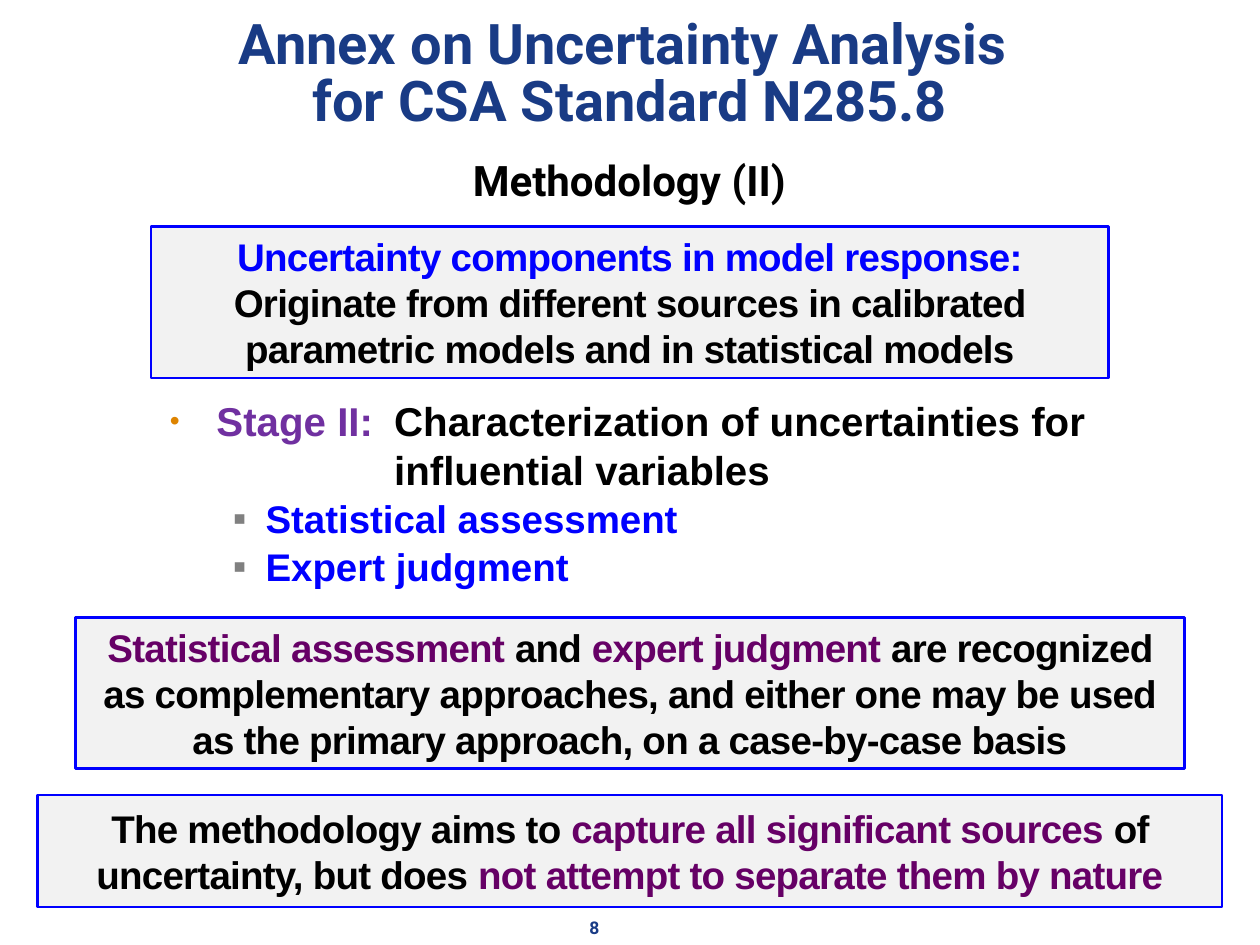
from dataclasses import dataclass
from typing import Optional

import lxml.etree
import pptx
import pptx.dml.color
import pptx.enum.shapes
import pptx.enum.text
import pptx.oxml.ns
import pptx.util

EMU_PER_PX = 9144
COLORS = {
    "navy": "193B85", "black": "000000", "white": "FFFFFF", "blue": "0000FF",
    "panel": "F2F2F2", "plum": "660066", "purple": "7030A0",
    "orange": "DE8400", "gray": "808080",
}
CENTER = pptx.enum.text.PP_ALIGN.CENTER
LEFT = pptx.enum.text.PP_ALIGN.LEFT
TOP = pptx.enum.text.MSO_ANCHOR.TOP
MIDDLE = pptx.enum.text.MSO_ANCHOR.MIDDLE


@dataclass(frozen=True)
class Box:
    left: int
    top: int
    width: int
    height: int


@dataclass(frozen=True)
class Style:
    font: str
    size: int
    tracking: int = 0


@dataclass(frozen=True)
class Piece:
    text: str
    color: str
    break_before: bool = False


@dataclass(frozen=True)
class Bullet:
    symbol: str
    color: str
    percent: int
    margin: int
    hanging: int
    level: int = 0
    space_before: int = 0
    tab: Optional[int] = None


@dataclass(frozen=True)
class Line:
    pieces: tuple[Piece, ...]
    style: Style
    align: int = CENTER
    spacing: float = 1.0
    bullet: Optional[Bullet] = None


@dataclass(frozen=True)
class Panel:
    box: Box
    lines: tuple[Line, ...]


TITLE = Style("Roboto", 32)
SUBTITLE = Style("Roboto", 24)
NUMBER = Style("Roboto", 10)
STAGE = Style("Arial", 23)
POINT = Style("Arial", 22)
PANEL = Style("Arial", 22, tracking=-40)

STAGE_BULLET = Bullet("•", "orange", 70, 37, 37, tab=178)
POINT_BULLET = Bullet("▪", "gray", 100, 76, 26, level=1, space_before=1)

TITLE_LINES = tuple(
    Line((Piece(text, "navy"),), TITLE, spacing=0.85)
    for text in ("Annex on Uncertainty Analysis ", "for CSA Standard N285.8")
)
SUBTITLE_LINES = (Line((Piece("Methodology (II)", "black"),), SUBTITLE, spacing=0.85),)
NUMBER_LINES = (Line((Piece("8", "navy"),), NUMBER, LEFT),)
STAGE_LINES = (
    Line((
        Piece("Stage II:", "purple"),
        Piece("\tCharacterization of uncertainties for", "black"),
        Piece("\tinfluential variables", "black", break_before=True),
    ), STAGE, LEFT, bullet=STAGE_BULLET),
) + tuple(
    Line((Piece(text, "blue"),), POINT, LEFT, bullet=POINT_BULLET)
    for text in ("Statistical assessment", "Expert judgment")
)
PANELS = (
    Panel(Box(120, 180, 760, 120), (
        Line((Piece("Uncertainty components in model response:", "blue"),), PANEL),
        Line((Piece("Originate from different sources in calibrated parametric "
                    "models and in statistical models", "black"),), PANEL),
    )),
    Panel(Box(60, 490, 880, 120), (
        Line((
            Piece("Statistical assessment ", "plum"),
            Piece("and ", "black"),
            Piece("expert judgment ", "plum"),
            Piece("are recognized as complementary approaches, and either one may "
                  "be used as the primary approach, on a case-by-case basis", "black"),
        ), PANEL),
    )),
    Panel(Box(30, 631, 940, 89), (
        Line((
            Piece("The methodology aims to ", "black"),
            Piece("capture all significant sources", "plum"),
            Piece(" of uncertainty, but does ", "black"),
            Piece("not attempt to separate them by nature", "plum"),
        ), PANEL),
    )),
)


def px(value: int) -> int:
    return pptx.util.Emu(value * EMU_PER_PX)


def place(box: Box) -> tuple[int, int, int, int]:
    return px(box.left), px(box.top), px(box.width), px(box.height)


def rgb(name: str) -> pptx.dml.color.RGBColor:
    return pptx.dml.color.RGBColor.from_string(COLORS[name])


def add_child(parent, tag: str, **attributes: str):
    return lxml.etree.SubElement(parent, pptx.oxml.ns.qn(tag), attributes)


def add_bullet(paragraph, bullet: Bullet) -> None:
    paragraph.level = bullet.level
    if bullet.space_before:
        paragraph.space_before = pptx.util.Pt(bullet.space_before)
    properties = paragraph._p.get_or_add_pPr()
    properties.set("marL", str(px(bullet.margin)))
    properties.set("indent", str(-px(bullet.hanging)))
    color = add_child(properties, "a:buClr")
    add_child(color, "a:srgbClr", val=COLORS[bullet.color])
    add_child(properties, "a:buSzPct", val=str(bullet.percent * 1000))
    add_child(properties, "a:buFont", typeface="Arial")
    add_child(properties, "a:buChar", char=bullet.symbol)
    if bullet.tab is not None:
        tabs = add_child(properties, "a:tabLst")
        add_child(tabs, "a:tab", pos=str(px(bullet.tab)), algn="l")


def write_lines(text_frame, lines: tuple[Line, ...], anchor: int) -> None:
    text_frame.word_wrap = True
    text_frame.vertical_anchor = anchor
    for index, line in enumerate(lines):
        paragraph = text_frame.add_paragraph() if index else text_frame.paragraphs[0]
        paragraph.alignment = line.align
        if line.spacing != 1.0:
            paragraph.line_spacing = line.spacing
        if line.bullet:
            add_bullet(paragraph, line.bullet)
        for piece in line.pieces:
            if piece.break_before:
                paragraph.add_line_break()
            run = paragraph.add_run()
            run.text = piece.text
            run.font.name = line.style.font
            run.font.size = pptx.util.Pt(line.style.size)
            run.font.bold = True
            run.font.color.rgb = rgb(piece.color)
            if line.style.tracking:
                run._r.get_or_add_rPr().set("spc", str(line.style.tracking))


def add_text(slide, box: Box, lines: tuple[Line, ...], anchor: int = TOP):
    shape = slide.shapes.add_textbox(*place(box))
    write_lines(shape.text_frame, lines, anchor)
    return shape


def add_rectangle(slide, box: Box, lines: tuple[Line, ...], fill: str,
                  outline: Optional[str], anchor: int) -> None:
    shape = slide.shapes.add_shape(pptx.enum.shapes.MSO_SHAPE.RECTANGLE, *place(box))
    shape.shadow.inherit = False
    shape.fill.solid()
    shape.fill.fore_color.rgb = rgb(fill)
    if outline:
        shape.line.color.rgb = rgb(outline)
        shape.line.width = pptx.util.Pt(1.5)
    else:
        shape.line.fill.background()
    write_lines(shape.text_frame, lines, anchor)


def main() -> None:
    presentation = pptx.Presentation()
    presentation.slide_width, presentation.slide_height = px(1000), px(750)
    slide = presentation.slides.add_slide(presentation.slide_layouts[6])
    add_text(slide, Box(458, 723, 49, 27), NUMBER_LINES)
    title = add_text(slide, Box(0, 0, 1000, 120), TITLE_LINES, MIDDLE)
    title.text_frame.margin_left = title.text_frame.margin_right = px(5)
    add_text(slide, Box(136, 124, 727, 46), SUBTITLE_LINES)
    add_rectangle(slide, Box(125, 310, 750, 170), STAGE_LINES, "white", None, TOP)
    for panel in PANELS:
        add_rectangle(slide, panel.box, panel.lines, "panel", "blue", MIDDLE)
    presentation.save("out.pptx")


if __name__ == "__main__":
    main()
